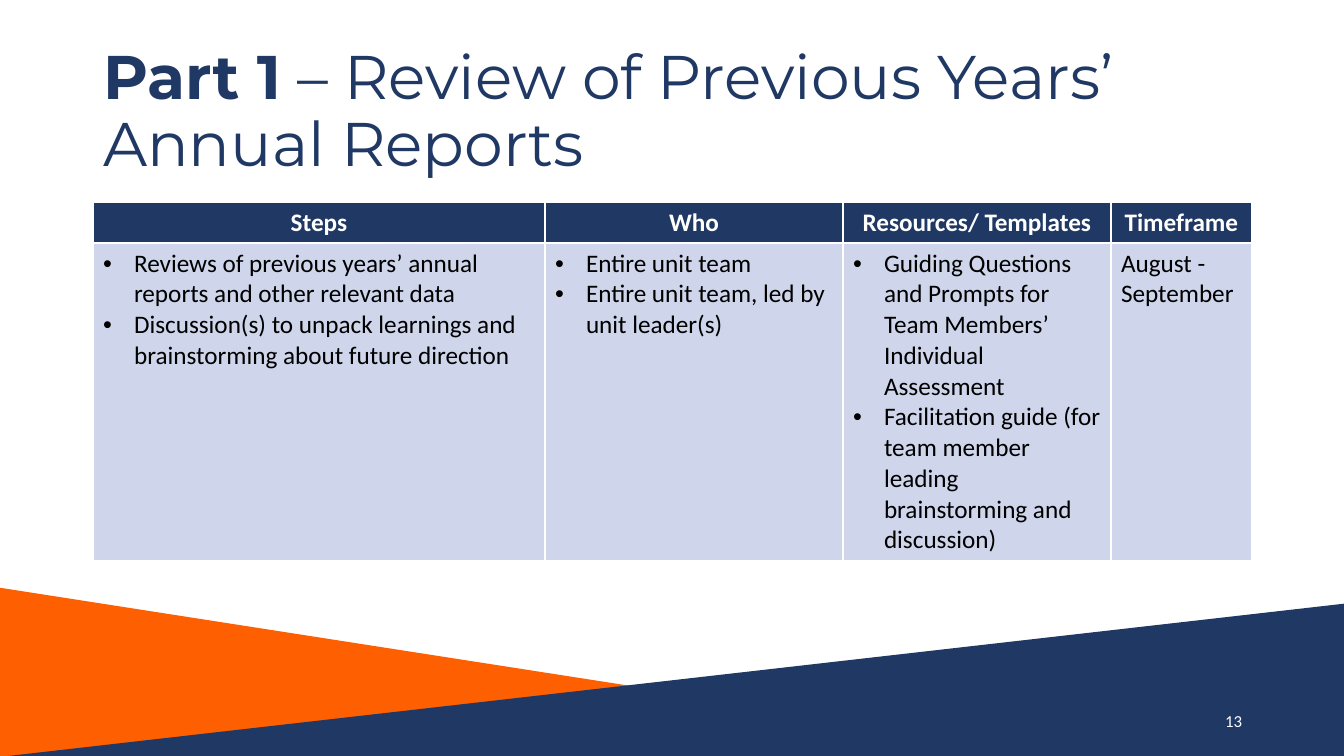
from lxml import etree
from pptx import Presentation
from pptx.dml.color import RGBColor
from pptx.enum.shapes import MSO_SHAPE
from pptx.enum.text import MSO_ANCHOR, MSO_AUTO_SIZE, PP_ALIGN
from pptx.oxml.ns import qn
from pptx.util import Emu, Pt

TRI = MSO_SHAPE.ISOSCELES_TRIANGLE
MID, TOP = MSO_ANCHOR.MIDDLE, MSO_ANCHOR.TOP
LEFT, MIDDLE, RIGHT = PP_ALIGN.LEFT, PP_ALIGN.CENTER, PP_ALIGN.RIGHT
FIXED = MSO_AUTO_SIZE.NONE

# Content
NAVY, ORANGE, PALE, WHITE, BLACK = "203864", "FE5F00", "CFD5EA", "FFFFFF", "000000"
TITLE = [("Part 1", True), (" – Review of Previous Years’ Annual Reports", False)]
HEADS = ["Steps", "Who", "Resources/ Templates", "Timeframe"]
BODY = [
    ["Reviews of previous years’ annual reports and other relevant data",
     "Discussion(s) to unpack learnings and brainstorming about future direction"],
    ["Entire unit team", "Entire unit team, led by unit leader(s)"],
    ["Guiding Questions and Prompts for Team Members’ Individual Assessment",
     "Facilitation guide (for team member leading brainstorming and discussion)"],
    ["August - September"],
]
WIDTHS = [452, 298, 268, 141]
HEIGHTS = [41, 313]
# Box, apex position along the top (0 left, 1 right), colour
WEDGES = [((-5, 587, 1086, 169), 0, ORANGE), ((8, 603, 1342, 153), 1, NAVY)]


def px(n):
    return Emu(round(n * 914400 / 100.8))


def color(code):
    return RGBColor.from_string(code)


def bullet(para):
    props = para._p.get_or_add_pPr()
    props.set("marL", str(px(31)))
    props.set("indent", str(px(-31)))
    etree.SubElement(props, qn("a:buFont")).set("typeface", "Arial")
    etree.SubElement(props, qn("a:buChar")).set("char", "•")


def write(frame, paras, size=18, font="Calibri", ink=BLACK, align=LEFT,
          gap=None, dots=False):
    """Fill a text frame; each paragraph is a list of (text, bold) runs."""
    frame.word_wrap = True
    for i, runs in enumerate(paras):
        para = frame.paragraphs[0] if i == 0 else frame.add_paragraph()
        para.alignment = align
        if gap:
            para.line_spacing = gap
        if dots:
            bullet(para)
        for text, bold in runs:
            run = para.add_run()
            run.text = text
            run.font.size, run.font.name = Pt(size), font
            run.font.bold = bold
            run.font.color.rgb = color(ink)


deck = Presentation()
deck.slide_width, deck.slide_height = px(1344), px(756)
slide = deck.slides.add_slide(deck.slide_layouts[5])
shapes = slide.shapes

# Wedges along the foot
for box, apex, fill in WEDGES:
    wedge = shapes.add_shape(TRI, *map(px, box))
    wedge.adjustments[0] = apex
    wedge.shadow.inherit = False
    wedge.fill.solid()
    wedge.fill.fore_color.rgb = color(fill)
    wedge.line.fill.background()

# Title
title = shapes.title
title.left, title.top, title.width, title.height = map(px, (93, 40, 1159, 146))
title.text_frame.auto_size = FIXED
title.text_frame.vertical_anchor = MID
write(title.text_frame, [TITLE], size=44, font="Montserrat", ink=NAVY, gap=0.9)

# Table
table = shapes.add_table(2, len(HEADS), px(93), px(202),
                         px(sum(WIDTHS)), px(sum(HEIGHTS))).table
table.horz_banding = False
for row, high in zip(table.rows, HEIGHTS):
    row.height = px(high)
for c, (wide, head, items) in enumerate(zip(WIDTHS, HEADS, BODY)):
    table.columns[c].width = px(wide)
    top, low = table.cell(0, c), table.cell(1, c)
    for cell, fill, anchor in ((top, NAVY, MID), (low, PALE, TOP)):
        cell.fill.solid()
        cell.fill.fore_color.rgb = color(fill)
        cell.vertical_anchor = anchor
    write(top.text_frame, [[(head, True)]], ink=WHITE, align=MIDDLE)
    write(low.text_frame, [[(item, False)] for item in items], dots=len(items) > 1)

# Page number
page = shapes.add_textbox(*map(px, (950, 701, 302, 40))).text_frame
page.vertical_anchor = MID
write(page, [[("13", False)]], size=12, ink=WHITE, align=RIGHT)

deck.save("out.pptx")
